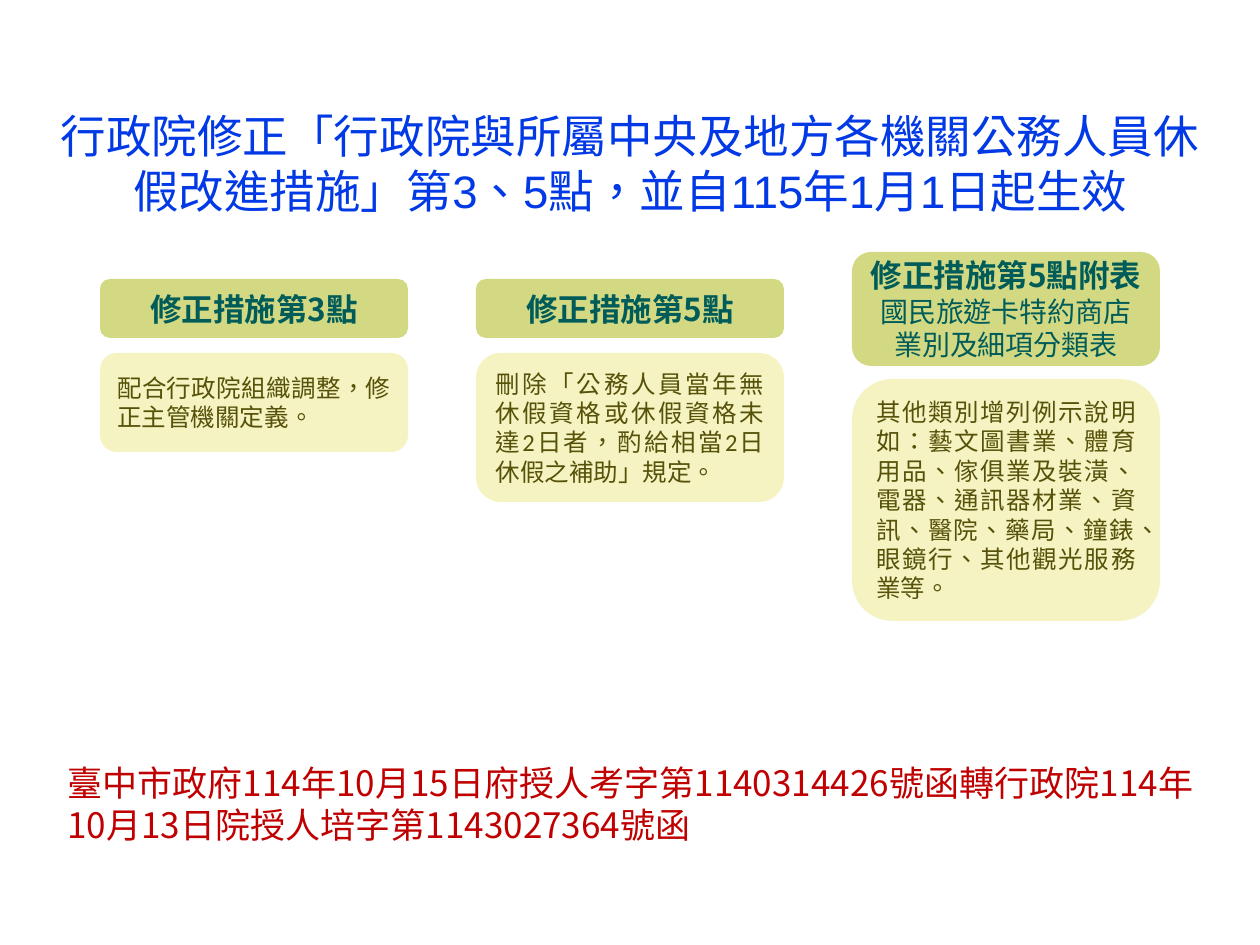
from lxml import etree
from pptx import Presentation
from pptx.dml.color import RGBColor
from pptx.enum.shapes import MSO_SHAPE
from pptx.enum.text import MSO_ANCHOR, MSO_AUTO_SIZE, PP_ALIGN
from pptx.oxml.ns import qn
from pptx.util import Pt

PX = 914400 // 126
ROUNDED = MSO_SHAPE.ROUNDED_RECTANGLE
MIDDLE = MSO_ANCHOR.MIDDLE
CENTER, JUSTIFY = PP_ALIGN.CENTER, PP_ALIGN.JUSTIFY
NOTO = "Noto Sans CJK SC"
HEADING_FILL, HEADING_TEXT = "D3D983", "005C59"
DETAIL_FILL, DETAIL_TEXT = "F5F3C1", "56520A"


def rgb(color):
    return RGBColor.from_string(color)


def add_run(paragraph, text, size, font, color, bold=False):
    """Add a run in Traditional Chinese with a Latin and an East Asian font."""
    run = paragraph.add_run()
    run.text = text
    run.font.size = Pt(size)
    run.font.name = font
    run.font.bold = bold
    run.font.color.rgb = rgb(color)
    properties = run.font._element
    properties.set("lang", "zh-TW")
    east_asian = etree.Element(qn("a:ea"), typeface=NOTO)
    properties.find(qn("a:latin")).addnext(east_asian)


prs = Presentation()
prs.slide_width, prs.slide_height = 1260 * PX, 945 * PX
slide = prs.slides.add_slide(prs.slide_layouts[5])

title = slide.shapes.title
title.left, title.top, title.width, title.height = 42 * PX, 84 * PX, 1177 * PX, 158 * PX
title.text_frame.auto_size = MSO_AUTO_SIZE.NONE
title.text_frame.vertical_anchor = MIDDLE
title.text_frame.paragraphs[0].alignment = CENTER
add_run(title.text_frame.paragraphs[0],
        "行政院修正「行政院與所屬中央及地方各機關公務人員休假改進措施」第3、5點，並自115年1月1日起生效",
        26, "Arial", "0039E5")

reference = slide.shapes.add_textbox(55 * PX, 755 * PX, 1163 * PX, 50 * PX)
reference.text_frame.word_wrap = True
add_run(reference.text_frame.paragraphs[0],
        "臺中市政府114年10月15日府授人考字第1140314426號函轉行政院114年10月13日院授人培字第1143027364號函",
        20, NOTO, "C00000")

# Each amendment: heading, subheading, heading top and height, detail, detail top and height
amendments = [
    ("修正措施第3點", "", 279, 59,
     "配合行政院組織調整，修正主管機關定義。", 353, 99),
    ("修正措施第5點", "", 279, 59,
     "刪除「公務人員當年無休假資格或休假資格未達2日者，酌給相當2日休假之補助」規定。", 353, 149),
    ("修正措施第5點附表", "國民旅遊卡特約商店業別及細項分類表", 252, 114,
     "其他類別增列例示說明如：藝文圖書業、體育用品、傢俱業及裝潢、電器、通訊器材業、"
     "資訊、醫院、藥局、鐘錶、眼鏡行、其他觀光服務業等。", 379, 242),
]
for column, amendment in enumerate(amendments):
    heading, subheading, heading_top, heading_height, detail, detail_top, detail_height = amendment
    heading_runs = [(heading, 18, NOTO, HEADING_TEXT, True)]
    if subheading:
        heading_runs.append((subheading, 16, "Calibri", HEADING_TEXT))
    cards = [
        (heading_top, heading_height, HEADING_FILL, CENTER, heading_runs),
        (detail_top, detail_height, DETAIL_FILL, JUSTIFY, [(detail, 14, "Calibri", DETAIL_TEXT)]),
    ]
    for top, height, fill, alignment, runs in cards:
        card = slide.shapes.add_shape(
            ROUNDED, (100 + 376 * column) * PX, top * PX, 308 * PX, height * PX)
        card.shadow.inherit = False
        card.fill.solid()
        card.fill.fore_color.rgb = rgb(fill)
        card.line.fill.background()
        card.text_frame.word_wrap = True
        card.text_frame.vertical_anchor = MIDDLE
        paragraph = card.text_frame.paragraphs[0]
        paragraph.alignment = alignment
        for run in runs:
            add_run(paragraph, *run)

prs.save("out.pptx")
